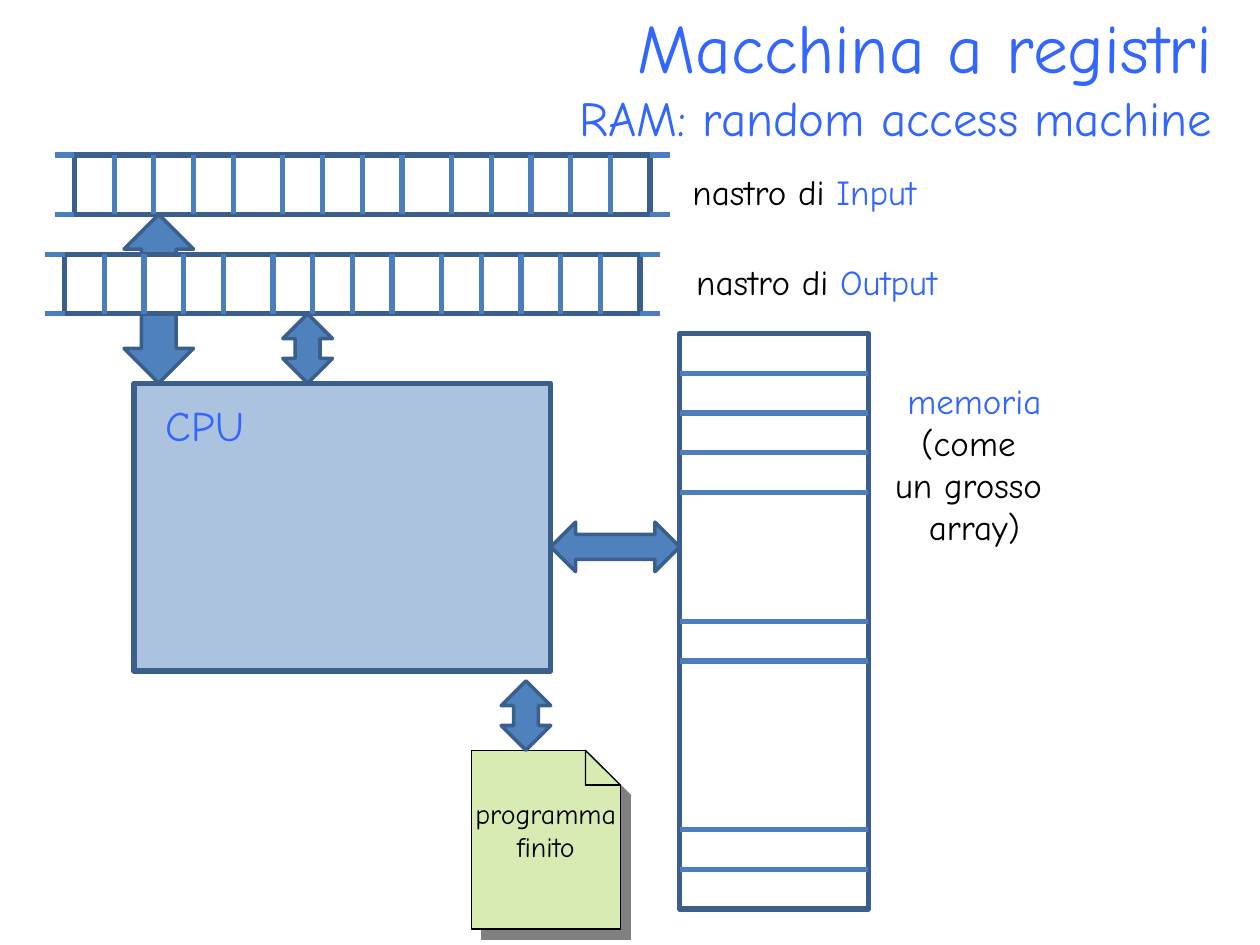
import pptx
import pptx.util
import pptx.dml.color
import pptx.enum.shapes
import pptx.enum.text
import pptx.oxml
import pptx.oxml.ns

RGB = pptx.dml.color.RGBColor
SHAPE = pptx.enum.shapes.MSO_SHAPE
ALIGN = pptx.enum.text.PP_ALIGN
ANCHOR = pptx.enum.text.MSO_ANCHOR
SIZING = pptx.enum.text.MSO_AUTO_SIZE
Pt = pptx.util.Pt

BLUE = RGB(0x33, 0x66, 0xFF)
BLACK = RGB(0, 0, 0)
WHITE = RGB(255, 255, 255)
STEEL = RGB(0x4F, 0x81, 0xBD)
EDGE = RGB(0x3A, 0x5F, 0x8C)
RULE = RGB(0x4B, 0x7E, 0xBC)
GREEN = RGB(0xD8, 0xEB, 0xB3)
FONT = "Comic Neue"

STEP = 0.07875
LEFT, TOP = 0.04, 1.23
CELL = 4
RUNS = [(1, 4), (5.25, 4), (9.5, 5)]
TAPE = [first + i for first, count in RUNS for i in range(count)]
CELLS = [1, 2, 3, 4, 7.25, 8.25, 12.5, 13.5]
SPAN = 14.5 * CELL


def span(n):
    """Return the length of n grid steps."""
    return pptx.util.Inches(n * STEP)


def spot(col, row):
    """Return the slide position of a grid point."""
    return pptx.util.Inches(LEFT + col * STEP), pptx.util.Inches(TOP + row * STEP)


def xml(tag, inner=""):
    """Build one DrawingML element."""
    space = pptx.oxml.ns.nsdecls("a")
    name = tag.split()[0]
    return pptx.oxml.parse_xml(f"<a:{tag} {space}>{inner}</a:{name}>")


def paint(shape, fill, line, width):
    """Give a shape its fill and outline, without a shadow."""
    shape.shadow.inherit = False
    if fill is None:
        shape.fill.background()
    else:
        shape.fill.solid()
        shape.fill.fore_color.rgb = fill
    shape.line.color.rgb = line
    shape.line.width = Pt(width)


def block(shapes, kind, box, fill, width):
    """Add a preset shape in a grid box."""
    col, row, wide, high = box
    shape = shapes.add_shape(kind, *spot(col, row), span(wide), span(high))
    paint(shape, fill, EDGE, width)
    return shape


def rule(shapes, start, end):
    """Draw a straight rule between two grid points."""
    kind = pptx.enum.shapes.MSO_CONNECTOR.STRAIGHT
    line = shapes.add_connector(kind, *spot(*start), *spot(*end))
    line.line.color.rgb = RULE
    line.line.width = Pt(3)
    line._element.spPr.append(xml("effectLst"))


def label(slide, box, size, lines):
    """Add centred lines, each a list of text and colour pairs."""
    col, row, wide, high = box
    area = slide.shapes.add_textbox(*spot(col, row), span(wide), span(high))
    frame = area.text_frame
    frame.word_wrap = False
    frame.auto_size = SIZING.SHAPE_TO_FIT_TEXT
    for i, parts in enumerate(lines):
        par = frame.add_paragraph() if i else frame.paragraphs[0]
        par.alignment = ALIGN.CENTER
        par.font.name, par.font.size = FONT, Pt(size)
        for text, color in parts:
            run = par.add_run()
            run.text = text
            run.font.name, run.font.size = FONT, Pt(size)
            run.font.color.rgb = color


def head(slide, lines):
    """Place and format the title."""
    title = slide.shapes.title
    title.left, title.top, title.width, title.height = map(
        pptx.util.Inches, (0.72, 0.21, 9, 0.77))
    frame = title.text_frame
    frame.vertical_anchor = ANCHOR.MIDDLE
    frame.auto_size = SIZING.NONE
    for i, (text, size) in enumerate(lines):
        par = frame.add_paragraph() if i else frame.paragraphs[0]
        par.alignment = ALIGN.RIGHT
        run = par.add_run()
        run.text = text
        for font in (par.font, run.font):
            font.name, font.size = FONT, Pt(size)
            font.color.rgb = BLUE


def tape(slide, col, row, fill, name, wide):
    """Draw a tape with open ends and its label."""
    shapes = slide.shapes.add_group_shape().shapes
    high = 6
    block(shapes, SHAPE.RECTANGLE, (col, row, SPAN, high), fill, 3)
    for mark in TAPE:
        x = col + mark * CELL
        rule(shapes, (x, row + high), (x, row))
    for x in (col - 2, col + SPAN):
        for y in (row, row + high):
            rule(shapes, (x, y), (x + 2, y))
    label(slide, (66.7, row + (0.9 if row == 0 else 0), wide, 5.6), 20,
          [[("nastro di ", BLACK), (name, BLUE)]])


def store(slide, col, row, wide):
    """Draw the memory column and its label."""
    shapes = slide.shapes.add_group_shape().shapes
    block(shapes, SHAPE.RECTANGLE, (col, row, wide, SPAN), None, 3)
    for mark in CELLS:
        y = row + mark * CELL
        rule(shapes, (col, y), (col + wide, y))
    label(slide, (col + wide + 1.1, row + 4, 19.2, 18.4), 20,
          [[("memoria", BLUE)], [("(come ", BLACK)],
           [("un grosso ", BLACK)], [("array)", BLACK)]])


def unit(slide, col, row, wide, high):
    """Draw the processor and its label."""
    box = block(slide.shapes, SHAPE.RECTANGLE, (col, row, wide, high), STEEL, 3)
    tint = box._element.spPr.find(".//" + pptx.oxml.ns.qn("a:srgbClr"))
    tint.append(xml('alpha val="47000"'))
    label(slide, (col + 1.9, row + 1, 10.5, 6.4), 24, [[("CPU", BLUE)]])


def page(slide, col, row, wide, high):
    """Draw the program sheet with a folded corner and its text."""
    fold = 3.5
    right, low = col + wide, row + high
    edge, base = right - fold, row + fold
    form = slide.shapes.build_freeform(*spot(col, row))
    form.add_line_segments([spot(*p) for p in (
        (edge, row), (edge, base), (right, base), (right, low), (col, low))])
    form.move_to(*spot(edge, row))
    form.add_line_segments([spot(right, base), spot(edge, base)])
    sheet = form.convert_to_shape()
    paint(sheet, GREEN, BLACK, 0.75)
    glow = sheet._element.spPr.find(pptx.oxml.ns.qn("a:effectLst"))
    glow.append(xml(f'outerShdw dist="{Pt(8.5)}" dir="2700000" algn="ctr" rotWithShape="0"',
                    '<a:srgbClr val="808080"/>'))
    label(slide, (col - 1.1, row + 4, 17.2, 8.1), 16,
          [[("programma", BLACK)], [("finito", BLACK)]])


def main():
    """Build and save the slide."""
    deck = pptx.Presentation()
    deck.slide_width = pptx.util.Inches(10)
    deck.slide_height = pptx.util.Inches(7.5)
    slide = deck.slides.add_slide(deck.slide_layouts[5])
    both = SHAPE.UP_DOWN_ARROW
    block(slide.shapes, both, (12, 6, 7, 17), STEEL, 2)
    head(slide, [("Macchina a registri", 39.6), ("RAM: random access machine", 27.9)])
    unit(slide, 13, 23, 42, 29)
    page(slide, 47, 60, 15, 18)
    store(slide, 68, 18, 19)
    tape(slide, 7, 0, None, "Input", 27.7)
    tape(slide, 6, 10, WHITE, "Output", 30.2)
    for kind, box in ((both, (28, 16, 5, 7)), (both, (50, 53, 5, 7)),
                      (SHAPE.LEFT_RIGHT_ARROW, (55, 37, 13, 5))):
        block(slide.shapes, kind, box, STEEL, 2)
    deck.save("out.pptx")


if __name__ == "__main__":
    main()
